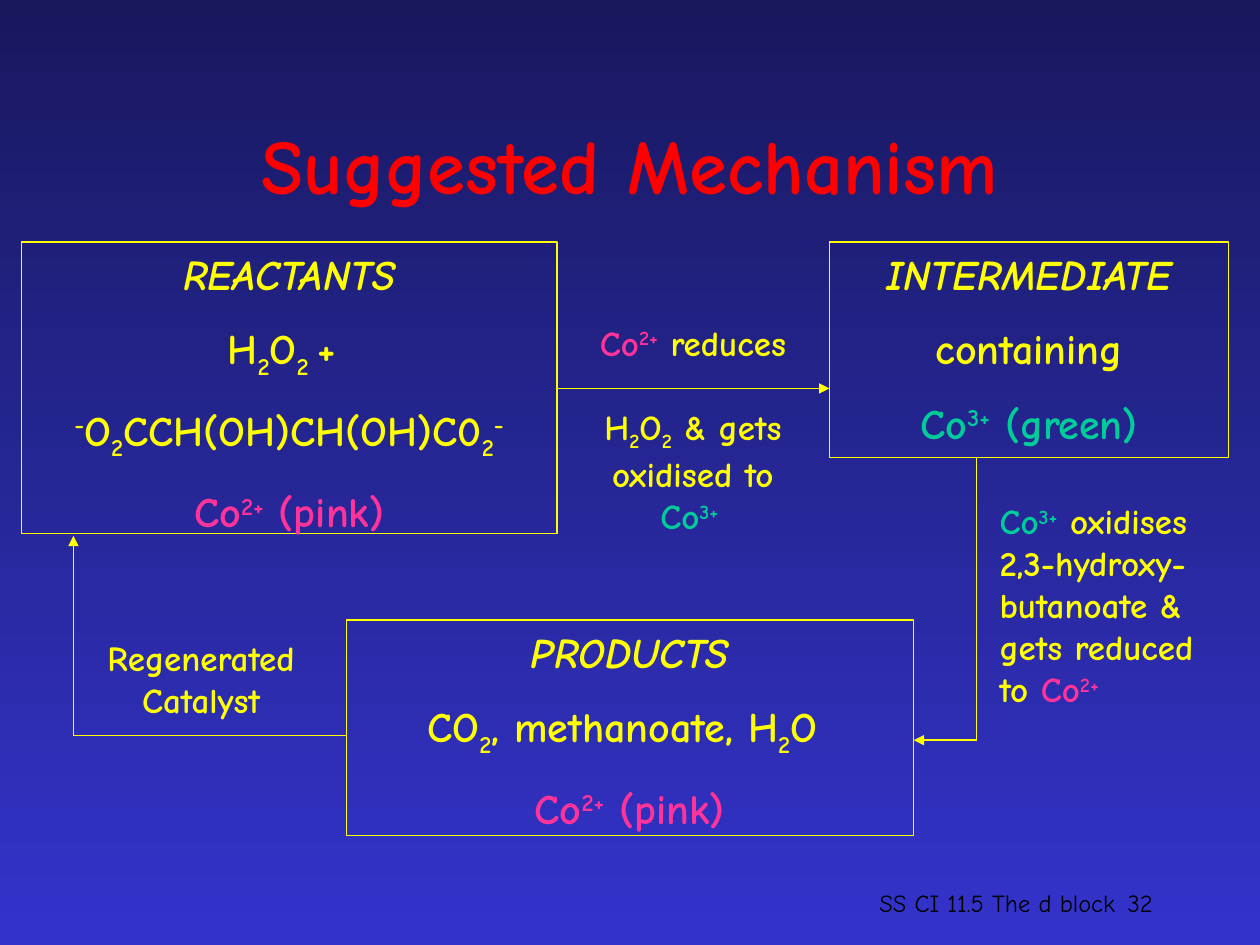
from dataclasses import dataclass
from typing import NamedTuple

import pptx
import pptx.dml.color
import pptx.enum.shapes
import pptx.enum.text
import pptx.oxml.ns
import pptx.util
from lxml import etree

Cm = pptx.util.Cm
Pt = pptx.util.Pt
ALIGN = pptx.enum.text.PP_ALIGN
ANCHOR = pptx.enum.text.MSO_ANCHOR

FONT = "Comic Neue"
YELLOW, PINK, GREEN = "FFFF00", "FF3399", "00CC99"
RED, BLACK = "FF0000", "000000"
SUB, SUPER = -25, 30


class Span(NamedTuple):
    text: str
    color: str = YELLOW
    baseline: int = 0
    italic: bool = False


@dataclass
class Block:
    """A box of text; frame is left, top, width, height in cm."""
    frame: tuple[float, float, float, float]
    paragraphs: list[list[Span]]
    size: int = 20
    align: ALIGN = ALIGN.CENTER
    anchor: ANCHOR = ANCHOR.TOP
    bold: bool = True
    outlined: bool = False
    wrap: bool = True
    gap: float = 0


class Arrow(NamedTuple):
    """A path of straight lines through points in cm, with a head at its end."""
    points: list[tuple[float, float]]


def rgb(color: str) -> pptx.dml.color.RGBColor:
    return pptx.dml.color.RGBColor.from_string(color)


def cobalt(charge: str, color: str, suffix: str = "") -> list[Span]:
    ion = [Span("Co", color), Span(charge, color, SUPER)]
    return ion + [Span(suffix, color)] if suffix else ion


def heading(text: str) -> list[Span]:
    return [Span(text, italic=True)]


def sub(text: str) -> Span:
    return Span(text, baseline=SUB)


def stage(frame: tuple[float, float, float, float], paragraphs: list[list[Span]]) -> Block:
    return Block(frame, paragraphs, size=24, outlined=True, gap=13.8)


def footer(frame: tuple[float, float, float, float], text: str, align: ALIGN) -> Block:
    return Block(frame, [[Span(text, BLACK)]], 14, align, ANCHOR.BOTTOM, bold=False)


def format_span(span, size: int, color: str, bold: bool) -> None:
    span.font.name = FONT
    span.font.size = Pt(size)
    span.font.bold = bold
    span.font.color.rgb = rgb(color)


def draw_block(page, block: Block) -> None:
    frame = [Cm(value) for value in block.frame]
    if block.outlined:
        box = page.shapes.add_shape(pptx.enum.shapes.MSO_SHAPE.RECTANGLE, *frame)
        box.shadow.inherit = False
        box.fill.background()
        box.line.color.rgb = rgb(YELLOW)
        box.line.width = Pt(0.75)
    else:
        box = page.shapes.add_textbox(*frame)
    text_frame = box.text_frame
    text_frame.word_wrap = block.wrap
    text_frame.vertical_anchor = block.anchor
    for index, spans in enumerate(block.paragraphs):
        para = text_frame.add_paragraph() if index else text_frame.paragraphs[0]
        para.alignment = block.align
        if index and block.gap:
            para.space_before = Pt(block.gap)
        for part in spans:
            span = para.add_run()
            span.text = part.text
            format_span(span, block.size, part.color, block.bold)
            span.font.italic = part.italic
            if part.baseline:
                span._r.get_or_add_rPr().set("baseline", str(part.baseline * 1000))


def draw_arrow(page, arrow: Arrow) -> None:
    for start, end in zip(arrow.points, arrow.points[1:]):
        line = page.shapes.add_connector(
            pptx.enum.shapes.MSO_CONNECTOR.STRAIGHT,
            *(Cm(value) for value in start + end))
        line.line.color.rgb = rgb(YELLOW)
        line.line.width = Pt(0.75)
        properties = line._element.spPr
        if end == arrow.points[-1]:
            etree.SubElement(properties.find(pptx.oxml.ns.qn("a:ln")),
                             pptx.oxml.ns.qn("a:tailEnd"), type="triangle")
        etree.SubElement(properties, pptx.oxml.ns.qn("a:effectLst"))


def draw_background(page) -> None:
    fill = page.background.fill
    fill.gradient()
    fill.gradient_angle = 270
    for stop, color in zip(fill.gradient_stops, ("18185E", "3333CC")):
        stop.color.rgb = rgb(color)


def draw_title(page, text: str) -> None:
    title = page.shapes.title
    title.left, title.top, title.width, title.height = Cm(1.9), Cm(1.7), Cm(21.6), Cm(3.18)
    title.text_frame.text = text
    title.text_frame.vertical_anchor = ANCHOR.MIDDLE
    para = title.text_frame.paragraphs[0]
    para.alignment = ALIGN.CENTER
    format_span(para.runs[0], 44, RED, True)


BLOCKS = [
    footer((16.08, 17.35, 8.05, 1.27), "SS CI 11.5 The d block", ALIGN.CENTER),
    footer((18.21, 17.35, 5.28, 1.27), "32", ALIGN.RIGHT),
    stage((0.43, 4.88, 10.8, 5.87), [
        heading("REACTANTS"),
        [Span("H"), sub("2"), Span("O"), sub("2 "), Span("+ ")],
        [Span("-", baseline=SUPER), Span("O"), sub("2"), Span("CCH(OH)CH(OH)C0"),
         sub("2"), Span("-", baseline=SUPER)],
        cobalt("2+", PINK, " (pink)"),
    ]),
    stage((16.72, 4.88, 8.05, 4.34), [
        heading("INTERMEDIATE"),
        [Span("containing")],
        cobalt("3+", GREEN, " (green)"),
    ]),
    stage((6.98, 12.5, 11.43, 4.34), [
        heading("PRODUCTS"),
        [Span("CO"), sub("2"), Span(", methanoate, H"), sub("2"), Span("O ")],
        cobalt("2+", PINK, " (pink)"),
    ]),
    Block((11.43, 6.35, 5.08, 1.09), [cobalt("2+", PINK) + [Span(" reduces")]]),
    Block((11.43, 8.04, 5.08, 2.8), [
        [Span("H"), sub("2"), Span("O"), sub("2"), Span(" & gets oxidised to ")]
        + cobalt("3+ ", GREEN)]),
    Block((19.9, 9.95, 4.87, 6.17), [
        cobalt("3+", GREEN)
        + [Span(" oxidises 2,3-hydroxy- butanoate & gets reduced to ")]
        + cobalt("2+", PINK)], align=ALIGN.LEFT),
    Block((1.68, 12.7, 4.75, 1.96), [[Span("Regenerated")], [Span("Catalyst")]], wrap=False),
]

ARROWS = [
    Arrow([(11.23, 7.83), (16.72, 7.83)]),
    Arrow([(19.69, 9.21), (19.69, 14.92), (18.42, 14.92)]),
    Arrow([(6.98, 14.82), (1.48, 14.82), (1.48, 10.8)]),
]


def main() -> None:
    deck = pptx.Presentation()
    deck.slide_width, deck.slide_height = Cm(25.4), Cm(19.05)
    page = deck.slides.add_slide(deck.slide_layouts[5])
    draw_background(page)
    draw_title(page, "Suggested Mechanism")
    for block in BLOCKS:
        draw_block(page, block)
    for arrow in ARROWS:
        draw_arrow(page, arrow)
    deck.save("out.pptx")


if __name__ == "__main__":
    main()
